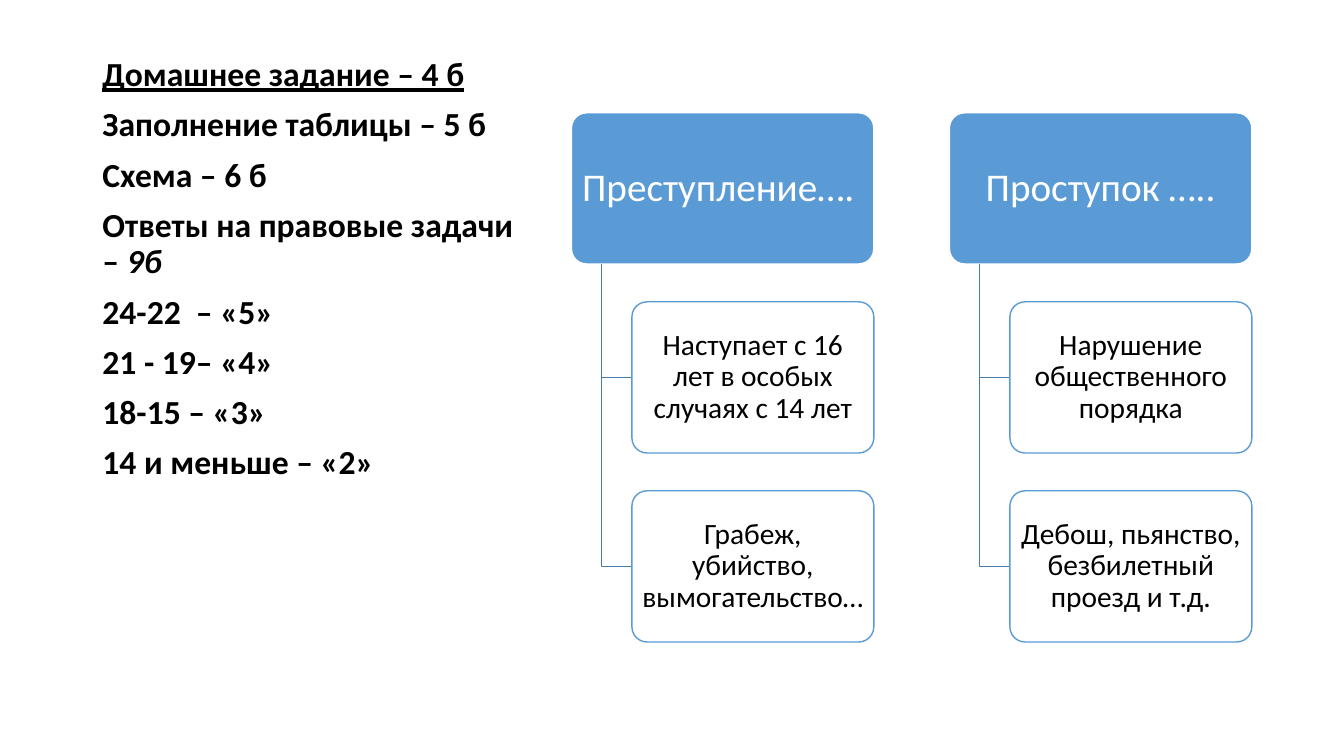
from lxml import etree
from pptx import Presentation
from pptx.dml.color import RGBColor
from pptx.enum.shapes import MSO_SHAPE
from pptx.enum.text import MSO_ANCHOR, MSO_AUTO_SIZE, PP_ALIGN
from pptx.oxml.ns import qn
from pptx.util import Pt

WHITE = RGBColor(0xFF, 0xFF, 0xFF)
BLACK = RGBColor(0x00, 0x00, 0x00)
BLUE = RGBColor(0x5B, 0x9B, 0xD5)
BRANCH_BLUE = RGBColor(0x49, 0x7C, 0xAB)
FONT = "Calibri"

TREE_LEFT, TREE_TOP = 408.2, 80.6
STEP = 270
ROW_STEP = 135
BOX_HEIGHT = 108
HEADER_WIDTH, CARD_WIDTH = 216, 172.8
BRANCH_INDENT, CARD_INDENT = 21.6, 43.2

SCORES = [
    [("Домашнее задание – 4 б", {"underline": True})],
    [("Заполнение таблицы – 5 б", {})],
    [("Схема – 6 б", {})],
    [("Ответы на правовые задачи – ", {}), ("9б", {"italic": True})],
    [("24-22  – «5»", {})],
    [("21 - 19– «4»", {})],
    [("18-15 – «3»", {})],
    [("14 и меньше – «2»", {})],
]
OFFENCES = [
    ("Преступление…. ", ["Наступает с 16 лет в особых случаях с 14 лет",
                         "Грабеж, убийство, вымогательство…"]),
    ("Проступок …..", ["Нарушение общественного порядка",
                       "Дебош, пьянство, безбилетный проезд и т.д."]),
]


def style_paragraph(paragraph, size, color):
    paragraph.line_spacing = 0.9
    paragraph.font.name = FONT
    paragraph.font.size = Pt(size)
    paragraph.font.color.rgb = color


def remove_bullet(paragraph):
    properties = paragraph._p.get_or_add_pPr()
    properties.set("marL", "0")
    properties.set("indent", "0")
    etree.SubElement(properties, qn("a:buNone"))


def fill_scores(body):
    body.left, body.top, body.width, body.height = Pt(66), Pt(37.6), Pt(309.6), Pt(424.8)
    frame = body.text_frame
    frame.auto_size = MSO_AUTO_SIZE.NONE
    for index, runs in enumerate(SCORES):
        paragraph = frame.add_paragraph() if index else frame.paragraphs[0]
        remove_bullet(paragraph)
        style_paragraph(paragraph, 24, BLACK)
        paragraph.space_before = Pt(10)
        paragraph.font.bold = True
        for text, emphasis in runs:
            run = paragraph.add_run()
            run.text = text
            for name, value in emphasis.items():
                setattr(run.font, name, value)


def add_box(shapes, text, left, top, width, size, fill, line, color):
    box = shapes.add_shape(MSO_SHAPE.ROUNDED_RECTANGLE,
                           Pt(left), Pt(top), Pt(width), Pt(BOX_HEIGHT))
    box.adjustments[0] = 0.1
    box.shadow.inherit = False
    box.fill.solid()
    box.fill.fore_color.rgb = fill
    box.line.color.rgb = line
    box.line.width = Pt(1)
    frame = box.text_frame
    frame.word_wrap = True
    frame.vertical_anchor = MSO_ANCHOR.MIDDLE
    frame.margin_left = frame.margin_right = Pt(size * 0.15)
    frame.margin_top = frame.margin_bottom = Pt(size * 0.1)
    paragraph = frame.paragraphs[0]
    paragraph.text = text
    paragraph.alignment = PP_ALIGN.CENTER
    style_paragraph(paragraph, size, color)
    return box


def add_card(shapes, text, left, top):
    card = add_box(shapes, text, left, top, CARD_WIDTH, 21, WHITE, BLUE, BLACK)
    white = card._element.spPr.find(qn("a:solidFill"))[0]
    etree.SubElement(white, qn("a:alpha"), val="90000")


def add_branch(shapes, left, top, right, bottom):
    builder = shapes.build_freeform(Pt(left), Pt(top))
    builder.add_line_segments([(Pt(left), Pt(bottom)), (Pt(right), Pt(bottom))], close=False)
    branch = builder.convert_to_shape()
    branch.shadow.inherit = False
    branch.fill.background()
    branch.line.color.rgb = BRANCH_BLUE
    branch.line.width = Pt(1)


def add_offence(shapes, left, heading, examples):
    add_box(shapes, heading, left, TREE_TOP, HEADER_WIDTH, 28, BLUE, WHITE, WHITE)
    card_left = left + CARD_INDENT
    for row, example in enumerate(examples, start=1):
        top = TREE_TOP + row * ROW_STEP
        add_branch(shapes, left + BRANCH_INDENT, TREE_TOP + BOX_HEIGHT,
                   card_left, top + BOX_HEIGHT / 2)
        add_card(shapes, example, card_left, top)


def main():
    presentation = Presentation()
    presentation.slide_width, presentation.slide_height = Pt(960), Pt(540)
    slide = presentation.slides.add_slide(presentation.slide_layouts.get_by_name("Title and Content"))
    title = slide.shapes.title._element
    title.getparent().remove(title)
    fill_scores(slide.placeholders[1])
    tree = slide.shapes.add_group_shape().shapes
    for column, (heading, examples) in enumerate(OFFENCES):
        add_offence(tree, TREE_LEFT + column * STEP, heading, examples)
    presentation.save("out.pptx")


if __name__ == "__main__":
    main()
